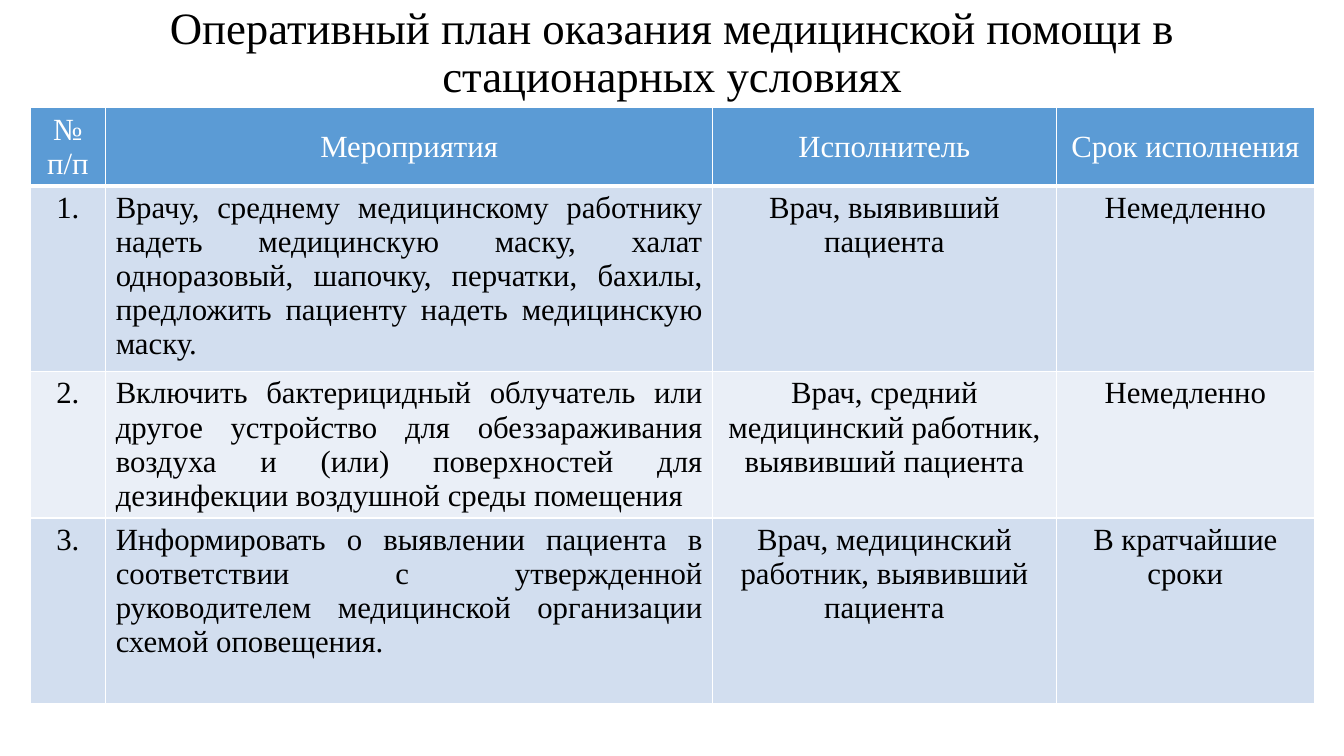
from dataclasses import dataclass

from lxml.etree import SubElement
from pptx import Presentation
from pptx.dml.color import RGBColor
from pptx.enum.text import MSO_ANCHOR as Anchor, PP_ALIGN as Align
from pptx.oxml.ns import qn
from pptx.util import Pt


@dataclass(frozen=True)
class Theme:
    font: str = "Times New Roman"
    title_size: int = 32
    table_size: int = 22
    dark: str = "000000"
    light: str = "FFFFFF"
    header_fill: str = "5B9BD5"
    band_fills: tuple = ("D2DEEF", "EAEFF7")
    border: str = "FFFFFF"


THEME = Theme()
TITLE = "Оперативный план оказания медицинской помощи в стационарных условиях"
HEADERS = ("№ п/п", "Мероприятия", "Исполнитель", "Срок исполнения")
STEPS = (
    (
        "Врачу, среднему медицинскому работнику надеть медицинскую маску, "
        "халат одноразовый, шапочку, перчатки, бахилы, предложить пациенту "
        "надеть медицинскую маску.",
        "Врач, выявивший пациента",
        "Немедленно",
    ),
    (
        "Включить бактерицидный облучатель или другое устройство для "
        "обеззараживания воздуха и (или) поверхностей для дезинфекции "
        "воздушной среды помещения",
        "Врач, средний медицинский работник, выявивший пациента",
        "Немедленно",
    ),
    (
        "Информировать о выявлении пациента в соответствии с утвержденной "
        "руководителем медицинской организации схемой оповещения.",
        "Врач, медицинский работник, выявивший пациента",
        "В кратчайшие сроки",
    ),
)
COLUMN_WIDTHS = (54, 433.5, 245.5, 184.5)
ROW_HEIGHTS = (52.5, 132.5, 99.5, 132.5)
ACTION_COLUMN = 1


def format_paragraph(paragraph, size, color, align):
    paragraph.alignment = align
    paragraph.font.name = THEME.font
    paragraph.font.size = Pt(size)
    paragraph.font.bold = False
    paragraph.font.color.rgb = RGBColor.from_string(color)


def set_borders(cell, bottom_width):
    properties = cell._tc.get_or_add_tcPr()
    for side, width in (("L", 1), ("R", 1), ("T", 1), ("B", bottom_width)):
        line = SubElement(properties, qn(f"a:ln{side}"), w=str(Pt(width)))
        fill = SubElement(line, qn("a:solidFill"))
        SubElement(fill, qn("a:srgbClr"), val=THEME.border)


def fill_cell(cell, text, fill, color, align, anchor, bottom_width):
    cell.text = text
    cell.vertical_anchor = anchor
    format_paragraph(cell.text_frame.paragraphs[0], THEME.table_size, color, align)
    set_borders(cell, bottom_width)
    cell.fill.solid()
    cell.fill.fore_color.rgb = RGBColor.from_string(fill)


def add_title(slide):
    title = slide.shapes.title
    title.left, title.top, title.width, title.height = Pt(44), Pt(0), Pt(872.5), Pt(77)
    title.text_frame.text = TITLE
    title.text_frame.vertical_anchor = Anchor.MIDDLE
    paragraph = title.text_frame.paragraphs[0]
    paragraph.line_spacing = 0.9
    format_paragraph(paragraph, THEME.title_size, THEME.dark, Align.CENTER)


def add_plan_table(slide):
    table = slide.shapes.add_table(
        len(ROW_HEIGHTS), len(COLUMN_WIDTHS), Pt(21.5), Pt(77),
        Pt(sum(COLUMN_WIDTHS)), Pt(sum(ROW_HEIGHTS)),
    ).table
    for column, width in zip(table.columns, COLUMN_WIDTHS):
        column.width = Pt(width)
    for row, height in zip(table.rows, ROW_HEIGHTS):
        row.height = Pt(height)

    for column, header in enumerate(HEADERS):
        fill_cell(table.cell(0, column), header, THEME.header_fill, THEME.light,
                  Align.CENTER, Anchor.MIDDLE, 3)
    for number, step in enumerate(STEPS, start=1):
        fill = THEME.band_fills[(number - 1) % len(THEME.band_fills)]
        for column, text in enumerate((f"{number}.", *step)):
            align = Align.JUSTIFY if column == ACTION_COLUMN else Align.CENTER
            fill_cell(table.cell(number, column), text, fill, THEME.dark,
                      align, Anchor.TOP, 1)


def main():
    presentation = Presentation()
    presentation.slide_width, presentation.slide_height = Pt(960), Pt(540)
    slide = presentation.slides.add_slide(presentation.slide_layouts.get_by_name("Title Only"))
    add_title(slide)
    add_plan_table(slide)
    presentation.save("out.pptx")


if __name__ == "__main__":
    main()
